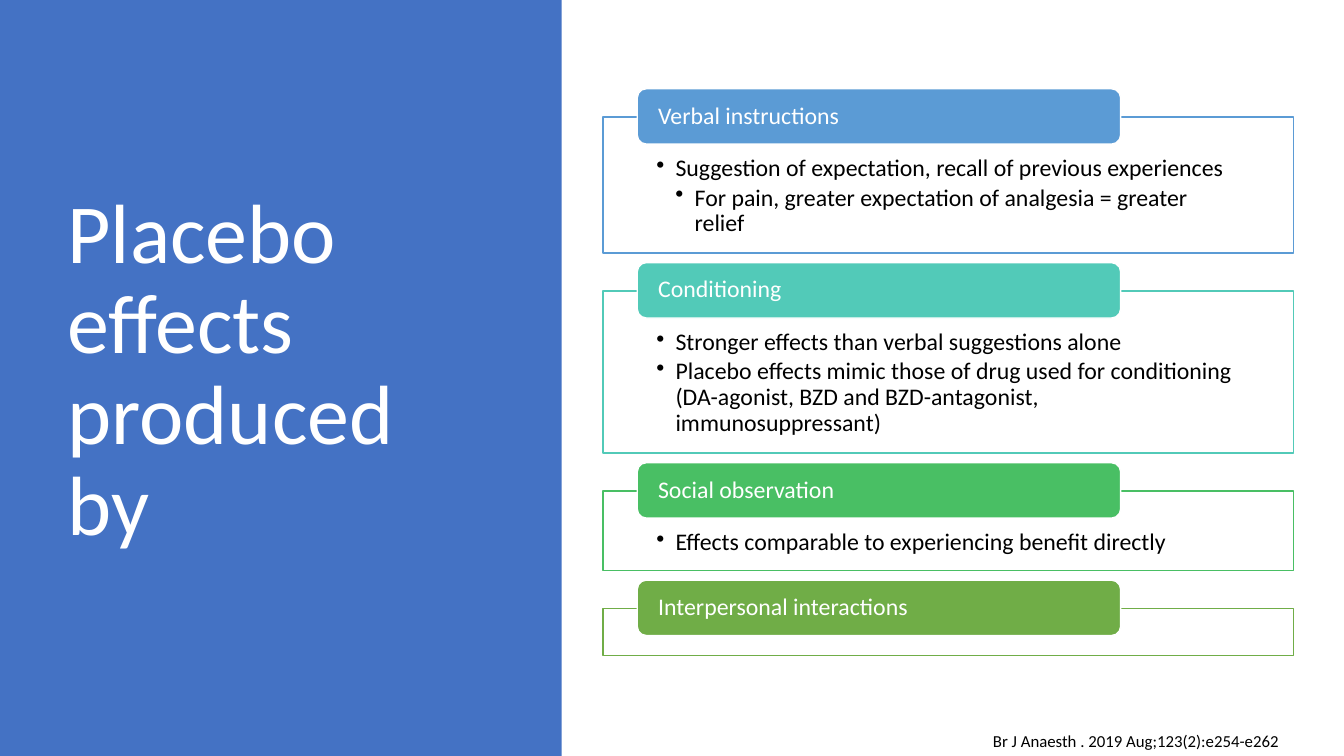
from lxml.etree import SubElement
from pptx import Presentation
from pptx.dml.color import RGBColor
from pptx.enum.shapes import MSO_SHAPE as Shape
from pptx.enum.text import MSO_ANCHOR as Anchor, MSO_AUTO_SIZE as AutoSize, PP_ALIGN as Align
from pptx.oxml.ns import qn
from pptx.util import Inches, Pt

COLORS = {
    "panel": "4472C4", "white": "FFFFFF", "black": "000000",
    "blue": "5B9BD5", "teal": "52CAB8", "green": "49BF64", "olive": "70AD47",
}
FONT = "Calibri"
TITLE = "Placebo effects produced by"
CITATION = "Br J Anaesth . 2019 Aug;123(2):e254-e262"
SECTIONS = [
    ("Verbal instructions", "blue", 1.35, [
        (1, "Suggestion of expectation, recall of previous experiences"),
        (2, "For pain, greater expectation of analgesia = greater relief"),
    ]),
    ("Conditioning", "teal", 1.61, [
        (1, "Stronger effects than verbal suggestions alone"),
        (1, "Placebo effects mimic those of drug used for conditioning "
            "(DA-agonist, BZD and BZD-antagonist, immunosuppressant)"),
    ]),
    ("Social observation", "green", 0.79, [
        (1, "Effects comparable to experiencing benefit directly"),
    ]),
    ("Interpersonal interactions", "olive", 0.47, []),
]
SECTION_GAP = 0.375


def color(name):
    """Return the named colour."""
    return RGBColor.from_string(COLORS[name])


def write(para, text, size, ink, spacing=0.9):
    """Put left-aligned, formatted text into a paragraph."""
    para.text = text
    para.alignment = Align.LEFT
    para.line_spacing = spacing
    for span in para.runs:
        span.font.name = FONT
        span.font.size = Pt(size)
        span.font.color.rgb = color(ink)


def set_insets(frame, left, top, right, bottom):
    """Set the four text margins, in inches."""
    frame.margin_left, frame.margin_top = Inches(left), Inches(top)
    frame.margin_right, frame.margin_bottom = Inches(right), Inches(bottom)


def add_block(page, kind, left, top, width, height, fill, line=None):
    """Add a filled shape with an optional one-point outline."""
    block = page.shapes.add_shape(
        kind, Inches(left), Inches(top), Inches(width), Inches(height))
    block.shadow.inherit = False
    block.fill.solid()
    block.fill.fore_color.rgb = color(fill)
    if line:
        block.line.color.rgb = color(line)
        block.line.width = Pt(1)
    else:
        block.line.fill.background()
    return block


def add_bullet(para, level):
    """Give a paragraph a hanging bullet at the given level."""
    para.level = level
    para.space_after = Pt(2.5)
    props = para._p.get_or_add_pPr()
    props.set("marL", str(Inches(0.19 * level)))
    props.set("indent", str(-Inches(0.19)))
    SubElement(props, qn("a:buChar")).set("char", "•")


def add_title_panel(page, left, top, width, height):
    """Draw the coloured panel with the title over it."""
    panel = add_block(page, Shape.RECTANGLE, left, top, width, height, "panel")
    title = page.shapes.title
    title.element.addprevious(panel.element)
    title.left, title.top = Inches(left + 0.57), Inches(top + 0.68)
    title.width, title.height = Inches(4.16), Inches(6.02)
    frame = title.text_frame
    frame.word_wrap = True
    frame.auto_size = AutoSize.NONE
    frame.vertical_anchor = Anchor.MIDDLE
    write(frame.paragraphs[0], TITLE, 60, "white")


def add_section(page, left, top, width, height, heading, accent, bullets):
    """Draw an outlined body with bullets and a heading tab on its top edge."""
    body = add_block(page, Shape.RECTANGLE, left, top, width, height, "white", accent)
    if bullets:
        frame = body.text_frame
        frame.word_wrap = True
        frame.vertical_anchor = Anchor.TOP
        set_insets(frame, 0.53, 0.39, 0.53, 0.13)
        for index, (level, text) in enumerate(bullets):
            para = frame.add_paragraph() if index else frame.paragraphs[0]
            write(para, text, 17, "black")
            add_bullet(para, level)

    tab = add_block(page, Shape.ROUNDED_RECTANGLE, left + 0.34, top - 0.28,
                    width * 0.7, 0.55, accent, "white")
    frame = tab.text_frame
    frame.word_wrap = True
    frame.vertical_anchor = Anchor.MIDDLE
    set_insets(frame, 0.18, 0, 0.18, 0)
    write(frame.paragraphs[0], heading, 17, "white")


def add_section_list(page, left, top, width):
    """Stack the sections with equal gaps."""
    for heading, accent, height, bullets in SECTIONS:
        add_section(page, left, top, width, height, heading, accent, bullets)
        top += height + SECTION_GAP


def add_citation(page, left, top, width, height):
    """Add the source reference."""
    box = page.shapes.add_textbox(
        Inches(left), Inches(top), Inches(width), Inches(height))
    frame = box.text_frame
    frame.word_wrap = False
    frame.auto_size = AutoSize.SHAPE_TO_FIT_TEXT
    write(frame.paragraphs[0], CITATION, 12, "black", 1.0)


def main():
    """Build the slide and save the deck."""
    deck = Presentation()
    deck.slide_width, deck.slide_height = Inches(13.33), Inches(7.5)
    page = deck.slides.add_slide(deck.slide_layouts[5])
    add_title_panel(page, 0, 0, 5.57, 7.5)
    add_section_list(page, 5.98, 1.16, 6.85)
    add_citation(page, 9.75, 7.2, 3.08, 0.3)
    deck.save("out.pptx")


if __name__ == "__main__":
    main()
